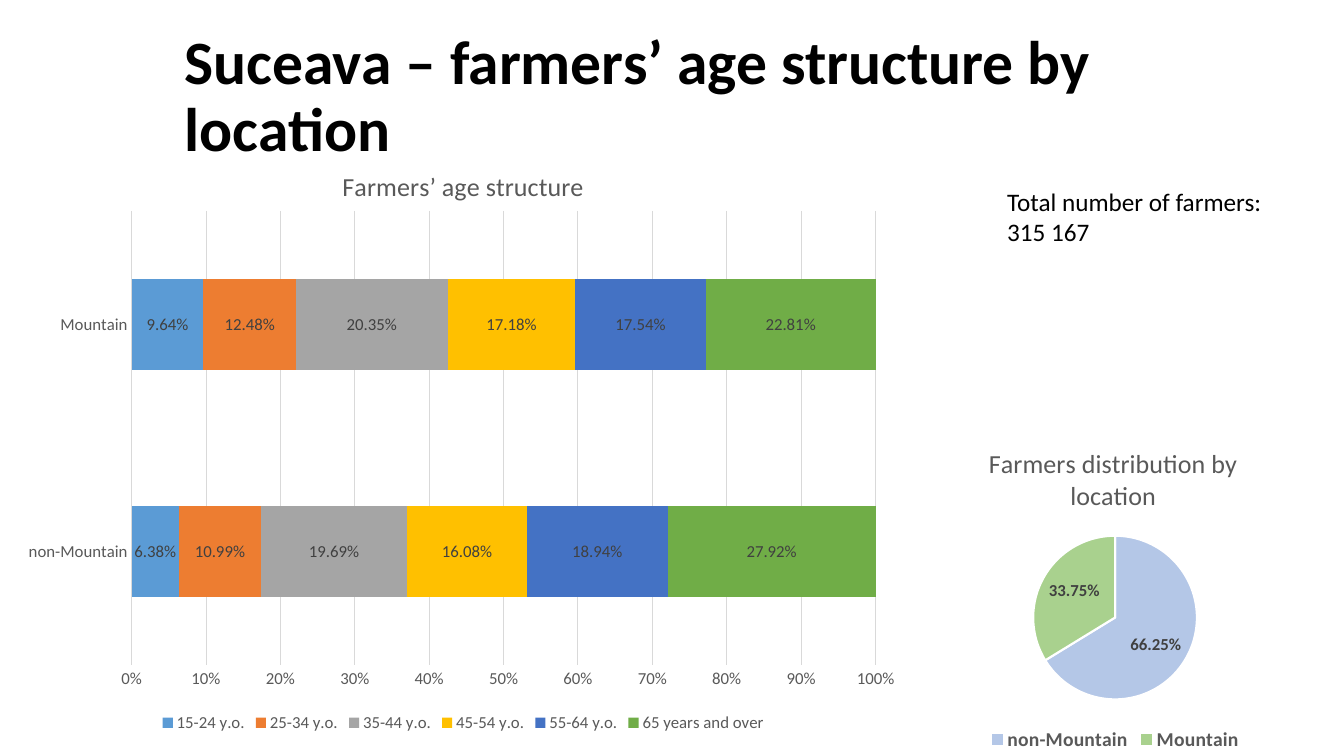
from lxml import etree
from pptx import Presentation
from pptx import util as u
from pptx.chart.data import CategoryChartData
from pptx.dml.color import RGBColor
from pptx.enum import chart as charts, text
from pptx.oxml.ns import qn

PX = 9144  # EMU per px, 100 px to the inch
FONT = "Calibri"
BLACK = RGBColor(0x00, 0x00, 0x00)
WHITE = RGBColor(0xFF, 0xFF, 0xFF)
DARK = RGBColor(0x40, 0x40, 0x40)
GRAY = RGBColor(0x59, 0x59, 0x59)
LIGHT = RGBColor(0xD9, 0xD9, 0xD9)
PALE_BLUE = RGBColor(0xB4, 0xC7, 0xE7)
PALE_GREEN = RGBColor(0xA9, 0xD1, 0x8E)
LOCATIONS = ["non-Mountain", "Mountain"]
AGE_GROUPS = [
    ("15-24 y.o.", (0.0638, 0.0964), RGBColor(0x5B, 0x9B, 0xD5)),
    ("25-34 y.o.", (0.1099, 0.1248), RGBColor(0xED, 0x7D, 0x31)),
    ("35-44 y.o.", (0.1969, 0.2035), RGBColor(0xA5, 0xA5, 0xA5)),
    ("45-54 y.o.", (0.1608, 0.1718), RGBColor(0xFF, 0xC0, 0x00)),
    ("55-64 y.o.", (0.1894, 0.1754), RGBColor(0x44, 0x72, 0xC4)),
    ("65 years and over", (0.2792, 0.2281), RGBColor(0x70, 0xAD, 0x47)),
]


def style(font, size, color, bold=False):
    font.name, font.size, font.bold = FONT, u.Pt(size), bold
    font.color.rgb = color


def place(parent, index, **values):
    """Set a manual layout, in fractions of the chart area."""
    for old in parent.findall(qn("c:layout")):
        parent.remove(old)
    layout = etree.Element(qn("c:layout"))
    manual = etree.SubElement(layout, qn("c:manualLayout"))
    if "w" in values:
        etree.SubElement(manual, qn("c:layoutTarget")).set("val", "inner")
    for name in ("xMode", "yMode"):
        etree.SubElement(manual, qn("c:" + name)).set("val", "edge")
    for name, value in values.items():
        etree.SubElement(manual, qn("c:" + name)).set("val", str(value))
    parent.insert(index, layout)


deck = Presentation()
deck.slide_width, deck.slide_height = 1333 * PX, 750 * PX
page = deck.slides.add_slide(deck.slide_layouts[5])

# Title
title = page.shapes.title
title.left, title.top, title.width, title.height = (n * PX for n in (173, 27, 1136, 140))
title.text_frame.word_wrap = True
title.text_frame.auto_size = text.MSO_AUTO_SIZE.NONE
title.text_frame.vertical_anchor = text.MSO_ANCHOR.MIDDLE
para = title.text_frame.paragraphs[0]
para.alignment = text.PP_ALIGN.LEFT
para.line_spacing = 0.9
span = para.add_run()
span.text = "Suceava – farmers’ age structure by location"
style(span.font, 44, BLACK, True)

# Chart data
share_data = CategoryChartData(number_format="0.00")
share_data.categories = LOCATIONS
share_data.add_series("Series 1", (66.25, 33.75))
age_data = CategoryChartData(number_format="0.00%")
age_data.categories = LOCATIONS
for name, values, color in AGE_GROUPS:
    age_data.add_series(name, values)

# Both charts: kind, data, place, title, title place, plot place, legend font
chart_parts = [
    (charts.XL_CHART_TYPE.PIE, share_data, (903, 427, 406, 323),
     "Farmers distribution by location", dict(x=0.18, y=0.03),
     dict(x=0.3, y=0.32, w=0.4, h=0.51), (14, GRAY, True)),
    (charts.XL_CHART_TYPE.BAR_STACKED_100, age_data, (15, 138, 889, 593),
     "Farmers’ age structure", dict(x=0.36, y=0.04),
     dict(x=0.13, y=0.12, w=0.83, h=0.76), (12, GRAY)),
]
made = []
for kind, data, spot, heading, heading_spot, plot_spot, legend_font in chart_parts:
    chart = page.shapes.add_chart(kind, *(n * PX for n in spot), data).chart
    style(chart.font, 10, BLACK)
    chart.has_title = True
    span = chart.chart_title.text_frame.paragraphs[0].add_run()
    span.text = heading
    style(span.font, 18.6, GRAY)
    chart.chart_title.include_in_layout = False
    place(chart.chart_title._element, 1, **heading_spot)
    place(chart._chartSpace.chart.plotArea, 0, **plot_spot)
    chart.has_legend = True
    chart.legend.position = charts.XL_LEGEND_POSITION.BOTTOM
    chart.legend.include_in_layout = False
    style(chart.legend.font, *legend_font)
    made.append(chart)
share_chart, age_chart = made

# Pie slices and labels
share_chart.plots[0].vary_by_categories = True
shares = share_chart.plots[0].series[0]
for index, color in enumerate((PALE_BLUE, PALE_GREEN)):
    slice_format = shares.points[index].format
    slice_format.fill.solid()
    slice_format.fill.fore_color.rgb = color
    slice_format.line.color.rgb = WHITE
    slice_format.line.width = u.Pt(1.5)
labels = shares.data_labels
labels.show_percentage, labels.show_value = True, False
labels.number_format, labels.number_format_is_linked = "0.00%", False
labels.position = charts.XL_LABEL_POSITION.INSIDE_END
style(labels.font, 12, DARK, True)

# Stacked bars and labels
bars = age_chart.plots[0]
bars.gap_width, bars.overlap = 150, 100
bars.vary_by_categories = False
for series, (name, values, color) in zip(bars.series, AGE_GROUPS):
    series.format.fill.solid()
    series.format.fill.fore_color.rgb = color
    labels = series.data_labels
    labels.show_value = True
    labels.number_format, labels.number_format_is_linked = "0.00%", False
    labels.position = charts.XL_LABEL_POSITION.CENTER
    style(labels.font, 12, DARK)

# Axes
places, shares_axis = age_chart.category_axis, age_chart.value_axis
for axis in (places, shares_axis):
    axis.major_tick_mark = axis.minor_tick_mark = charts.XL_TICK_MARK.NONE
    style(axis.tick_labels.font, 12, GRAY)
places.has_major_gridlines = False
shares_axis.has_major_gridlines = True
for line in (places.format.line, shares_axis.major_gridlines.format.line):
    line.color.rgb = LIGHT
    line.width = u.Pt(0.75)
shares_axis.format.line.fill.background()
shares_axis.minimum_scale, shares_axis.maximum_scale = 0, 1
shares_axis.major_unit = 0.1
shares_axis.tick_labels.number_format = "0%"
shares_axis.tick_labels.number_format_is_linked = False

# Total
box = page.shapes.add_textbox(*(n * PX for n in (989, 180, 292, 71)))
box.text_frame.word_wrap = True
box.text_frame.auto_size = text.MSO_AUTO_SIZE.SHAPE_TO_FIT_TEXT
for index, words in enumerate(("Total number of farmers:", "315 167")):
    para = box.text_frame.add_paragraph() if index else box.text_frame.paragraphs[0]
    span = para.add_run()
    span.text = words
    style(span.font, 18, BLACK)

deck.save("out.pptx")
